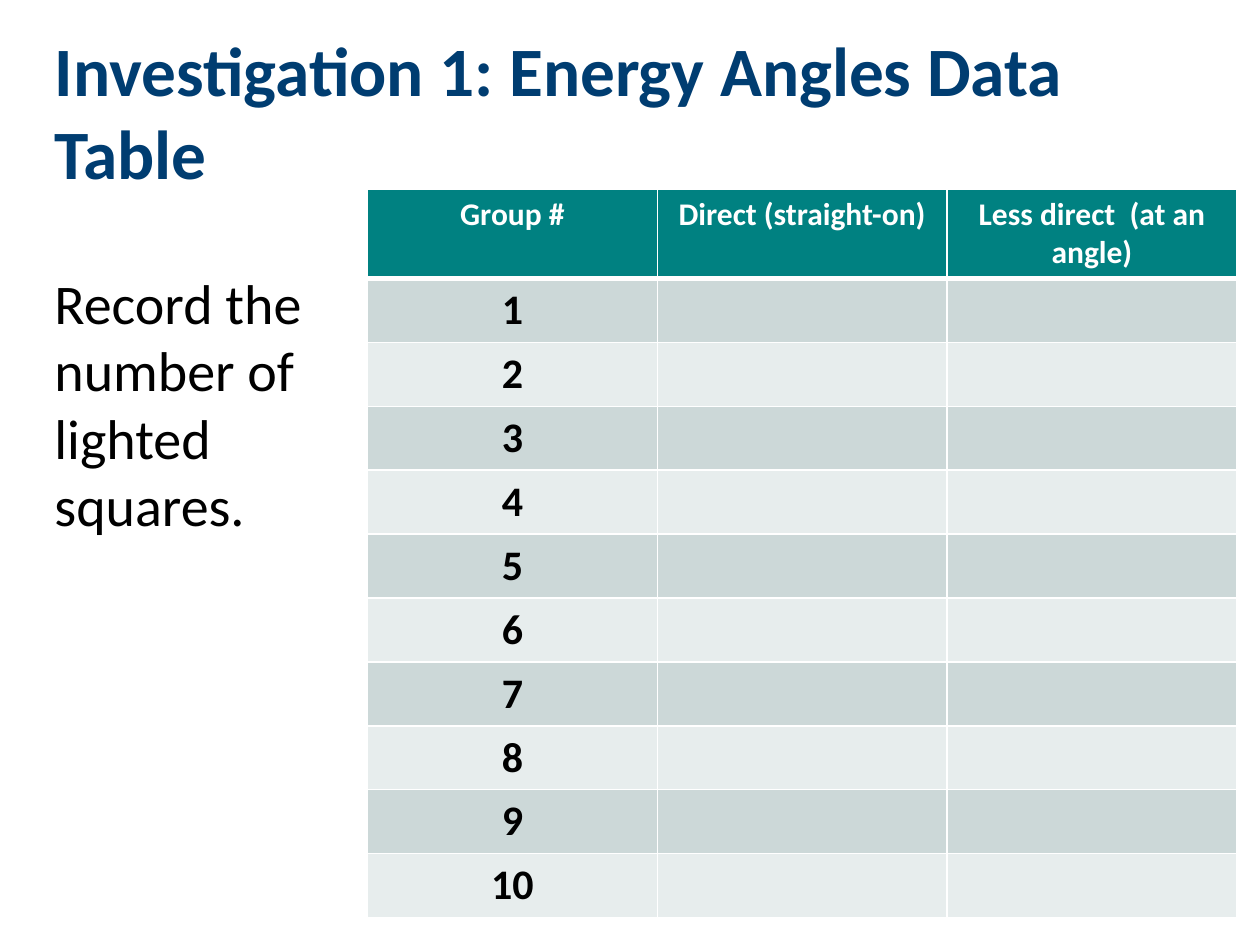
from lxml import etree
from pptx import Presentation
from pptx.dml.color import RGBColor
from pptx.enum import text
from pptx.oxml.ns import qn
from pptx.util import Pt

FONT = "Calibri"
NAVY = RGBColor(0x00, 0x3D, 0x71)
TEAL = RGBColor(0x00, 0x81, 0x81)
BAND_DARK = RGBColor(0xCC, 0xD8, 0xD8)
BAND_LIGHT = RGBColor(0xE7, 0xED, 0xED)
WHITE = RGBColor(0xFF, 0xFF, 0xFF)
BLACK = RGBColor(0x00, 0x00, 0x00)

HEADINGS = ["Group #", "Direct (straight-on)", "Less direct  (at an angle)"]
GROUPS = 10
HEADER_HEIGHT, ROW_HEIGHT = 51, 36.5


def write(frame, words, size, color, bold=False, align=text.PP_ALIGN.LEFT):
    paragraph = frame.paragraphs[0]
    paragraph.text = words
    paragraph.alignment = align
    font = paragraph.font
    font.name, font.size, font.bold = FONT, Pt(size), bold
    font.color.rgb = color


def add_title(slide, left, top, width, height):
    title = slide.shapes.title
    title.left, title.top = Pt(left), Pt(top)
    title.width, title.height = Pt(width), Pt(height)
    frame = title.text_frame
    frame.auto_size = text.MSO_AUTO_SIZE.NONE
    frame.vertical_anchor = text.MSO_ANCHOR.MIDDLE
    write(frame, "Investigation 1: Energy Angles Data Table", 39.6, NAVY, bold=True)


def add_instruction(slide, left, top, width, height):
    frame = slide.shapes.add_textbox(Pt(left), Pt(top), Pt(width), Pt(height)).text_frame
    frame.word_wrap = True
    write(frame, "Record the number of lighted squares.", 32, BLACK)


def set_borders(cell, **widths):
    """Draw white cell borders; widths are in points, keyed L, R, T, B."""
    properties = cell._tc.get_or_add_tcPr()
    for side, width in widths.items():
        line = etree.SubElement(properties, qn(f"a:ln{side}"), w=str(Pt(width)))
        fill = etree.SubElement(line, qn("a:solidFill"))
        etree.SubElement(fill, qn("a:srgbClr"), val=str(WHITE))


def add_data_table(slide, left, top, width):
    height = HEADER_HEIGHT + GROUPS * ROW_HEIGHT
    table = slide.shapes.add_table(GROUPS + 1, len(HEADINGS), Pt(left), Pt(top),
                                   Pt(width), Pt(height)).table
    for column in table.columns:
        column.width = Pt(width / len(HEADINGS))

    for r, row in enumerate(table.rows):
        row.height = Pt(ROW_HEIGHT if r else HEADER_HEIGHT)
        band = BAND_DARK if r % 2 else BAND_LIGHT
        for c, cell in enumerate(row.cells):
            set_borders(cell, L=1, R=1, T=3 if r == 1 else 1, B=1 if r else 3)
            cell.fill.solid()
            cell.fill.fore_color.rgb = band if r else TEAL
            if r == 0:
                write(cell.text_frame, HEADINGS[c], 18, WHITE, True, text.PP_ALIGN.CENTER)
            elif c == 0:
                cell.vertical_anchor = text.MSO_ANCHOR.MIDDLE
                write(cell.text_frame, str(r), 24, BLACK, True, text.PP_ALIGN.CENTER)


def main():
    deck = Presentation()
    deck.slide_width, deck.slide_height = Pt(720), Pt(540)
    slide = deck.slides.add_slide(deck.slide_layouts.get_by_name("Title Only"))
    add_title(slide, 24, 30, 660, 66)
    add_data_table(slide, 210, 108, 496.8)
    add_instruction(slide, 24, 150, 192, 163)
    deck.save("out.pptx")


if __name__ == "__main__":
    main()
